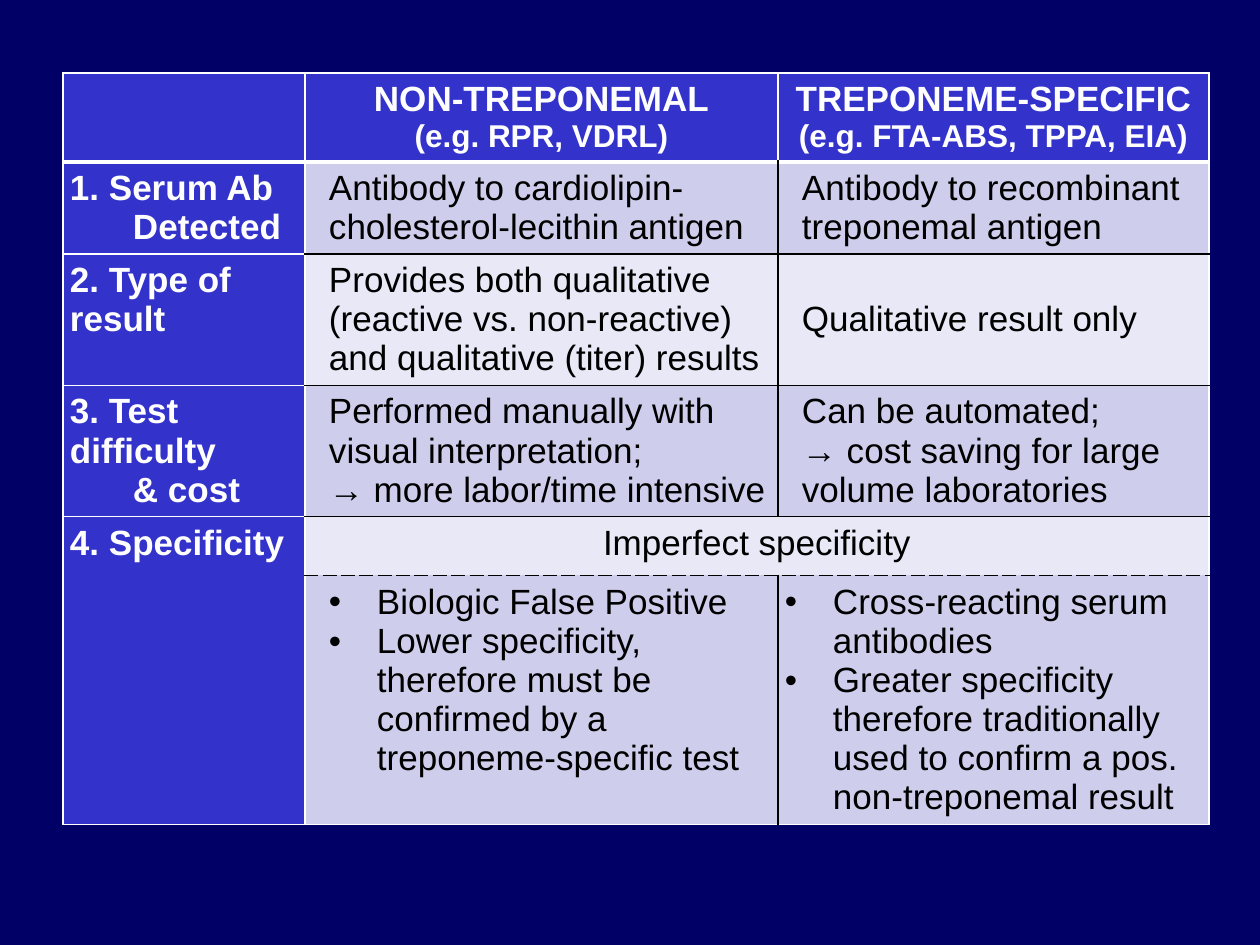
"""Build a slide comparing non-treponemal and treponeme-specific syphilis tests."""
from dataclasses import dataclass

from lxml import etree
from pptx import Presentation
from pptx.dml.color import RGBColor
from pptx.enum.text import MSO_ANCHOR, PP_ALIGN
from pptx.oxml.ns import qn
from pptx.util import Pt

PX = 914400 / 126
NAVY = RGBColor(0x00, 0x00, 0x66)
BLUE = RGBColor(0x33, 0x33, 0xCC)
LAVENDER = RGBColor(0xCE, 0xCE, 0xEC)
PALE = RGBColor(0xE8, 0xE8, 0xF6)
WHITE = RGBColor(0xFF, 0xFF, 0xFF)
OFF_WHITE = RGBColor(0xFE, 0xFE, 0xFE)
BLACK = RGBColor(0x00, 0x00, 0x00)
CENTER = PP_ALIGN.CENTER
LEFT = PP_ALIGN.LEFT
TOP = MSO_ANCHOR.TOP
MIDDLE = MSO_ANCHOR.MIDDLE

COLUMN_WIDTHS = (242, 473, 431)
ROW_HEIGHTS = (89, 92, 131, 131, 59, 249)
TABLE_LEFT, TABLE_TOP = 63, 73
INSET = 7
LABEL_TAB = 39
BODY_INDENT = 17
BULLET_HANG = 48


@dataclass(frozen=True)
class Entry:
    """Content and layout of one table cell."""
    row: int
    column: int
    lines: tuple[str, ...]
    indent: int = 0
    bulleted: bool = False
    align: PP_ALIGN = LEFT
    anchor: MSO_ANCHOR = TOP
    sizes: tuple[int, ...] = (20, 20)

    @property
    def is_heading(self) -> bool:
        """Tell whether the cell is in the header row or label column."""
        return self.row == 0 or self.column == 0


@dataclass(frozen=True)
class Edge:
    """Line along one side of a cell."""
    color: RGBColor = WHITE
    width: int = 1
    dash: str = "solid"


def header(column: int, title: str, examples: str) -> Entry:
    """Describe a column header."""
    return Entry(0, column, (title, examples), align=CENTER, sizes=(20, 18))


ENTRIES = (
    header(1, "NON-TREPONEMAL", "(e.g. RPR, VDRL)"),
    header(2, "TREPONEME-SPECIFIC", "(e.g. FTA-ABS, TPPA, EIA)"),
    Entry(1, 0, ("1. Serum Ab", "\tDetected")),
    Entry(1, 1, ("Antibody to cardiolipin-cholesterol-lecithin antigen",), BODY_INDENT),
    Entry(1, 2, ("Antibody to recombinant treponemal antigen",), BODY_INDENT),
    Entry(2, 0, ("2. Type of \tresult",)),
    Entry(2, 1, ("Provides both qualitative (reactive vs. non-reactive) "
                 "and qualitative (titer) results",), BODY_INDENT),
    Entry(2, 2, ("Qualitative result only",), BODY_INDENT, anchor=MIDDLE),
    Entry(3, 0, ("3. Test \tdifficulty", "\t& cost")),
    Entry(3, 1, ("Performed manually with visual interpretation;",
                 "→ more labor/time intensive"), BODY_INDENT),
    Entry(3, 2, ("Can be automated;",
                 "→ cost saving for large \tvolume laboratories"), BODY_INDENT),
    Entry(4, 0, ("4. Specificity",)),
    Entry(4, 1, ("Imperfect specificity",), align=CENTER),
    Entry(5, 1, ("Biologic False Positive",
                 "Lower specificity, therefore must be confirmed by a "
                 "treponeme-specific test"), BODY_INDENT, bulleted=True),
    Entry(5, 2, ("Cross-reacting serum antibodies",
                 "Greater specificity therefore traditionally used to confirm "
                 "a pos. non-treponemal result"), bulleted=True),
)


def px(length: int) -> int:
    """Turn pixels into EMU."""
    return round(length * PX)


def vertical_edge(boundary: int, row: int) -> Edge:
    """Return the line at a column boundary."""
    return Edge(BLACK) if boundary == 2 and row in (1, 2, 3, 5) else Edge()


def horizontal_edge(boundary: int, column: int) -> Edge:
    """Return the line at a row boundary."""
    if boundary == 1:
        return Edge(width=3)
    if column == 0 or boundary in (0, len(ROW_HEIGHTS)):
        return Edge()
    return Edge(BLACK, dash="dash" if boundary == 5 else "solid")


def cell_fill(row: int, column: int) -> RGBColor:
    """Return the heading or banded background colour."""
    if row == 0 or column == 0:
        return BLUE
    return LAVENDER if row % 2 else PALE


def style_cell(cell, row: int, column: int) -> None:
    """Give a cell its edges, fill and insets."""
    properties = cell._tc.get_or_add_tcPr()
    edges = {
        "a:lnL": vertical_edge(column, row),
        "a:lnR": vertical_edge(column + 1, row),
        "a:lnT": horizontal_edge(row, column),
        "a:lnB": horizontal_edge(row + 1, column),
    }
    for tag, edge in edges.items():
        line = etree.SubElement(properties, qn(tag), w=str(Pt(edge.width)))
        fill = etree.SubElement(line, qn("a:solidFill"))
        etree.SubElement(fill, qn("a:srgbClr"), val=str(edge.color))
        etree.SubElement(line, qn("a:prstDash"), val=edge.dash)
    cell.fill.solid()
    cell.fill.fore_color.rgb = cell_fill(row, column)
    cell.margin_left = cell.margin_right = px(INSET)
    cell.margin_top = cell.margin_bottom = px(INSET)


def write_entry(cell, entry: Entry) -> None:
    """Write and format the text of a cell."""
    cell.vertical_anchor = entry.anchor
    cell.text_frame.text = "\n".join(entry.lines)
    for paragraph, size in zip(cell.text_frame.paragraphs, entry.sizes):
        paragraph.alignment = entry.align
        properties = paragraph._p.get_or_add_pPr()
        hang = BULLET_HANG if entry.bulleted else 0
        properties.set("marL", str(px(entry.indent + hang)))
        properties.set("indent", str(-px(hang)))
        if entry.bulleted:
            etree.SubElement(properties, qn("a:buFont"), typeface="Arial")
            etree.SubElement(properties, qn("a:buChar"), char="•")
        if entry.column == 0:
            tabs = etree.SubElement(properties, qn("a:tabLst"))
            etree.SubElement(tabs, qn("a:tab"), pos=str(px(LABEL_TAB)), algn="l")
        for run in paragraph.runs:
            run.font.name = "Arial"
            run.font.size = Pt(size)
            run.font.bold = entry.is_heading
            run.font.color.rgb = OFF_WHITE if entry.is_heading else BLACK


def main() -> None:
    """Create and save the presentation."""
    presentation = Presentation()
    presentation.slide_width = px(1260)
    presentation.slide_height = px(945)
    slide = presentation.slides.add_slide(presentation.slide_layouts[6])
    slide.background.fill.solid()
    slide.background.fill.fore_color.rgb = NAVY
    comparison = slide.shapes.add_table(
        len(ROW_HEIGHTS), len(COLUMN_WIDTHS), px(TABLE_LEFT), px(TABLE_TOP),
        px(sum(COLUMN_WIDTHS)), px(sum(ROW_HEIGHTS))).table
    for column, width in zip(comparison.columns, COLUMN_WIDTHS):
        column.width = px(width)
    for row, height in zip(comparison.rows, ROW_HEIGHTS):
        row.height = px(height)
    for row in range(len(ROW_HEIGHTS)):
        for column in range(len(COLUMN_WIDTHS)):
            style_cell(comparison.cell(row, column), row, column)
    comparison.cell(4, 0).merge(comparison.cell(5, 0))
    comparison.cell(4, 1).merge(comparison.cell(4, 2))
    for entry in ENTRIES:
        write_entry(comparison.cell(entry.row, entry.column), entry)
    presentation.save("out.pptx")


if __name__ == "__main__":
    main()
